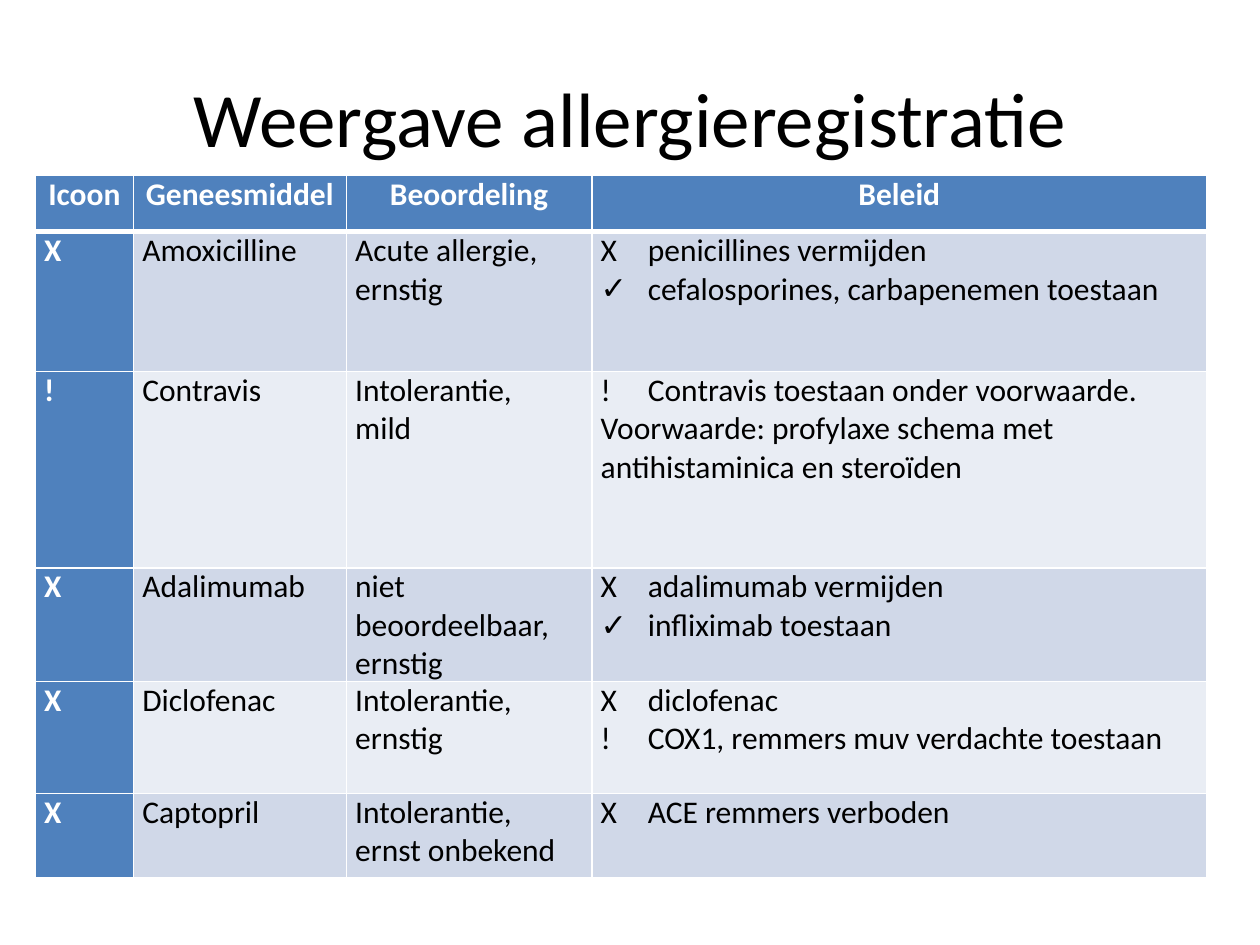
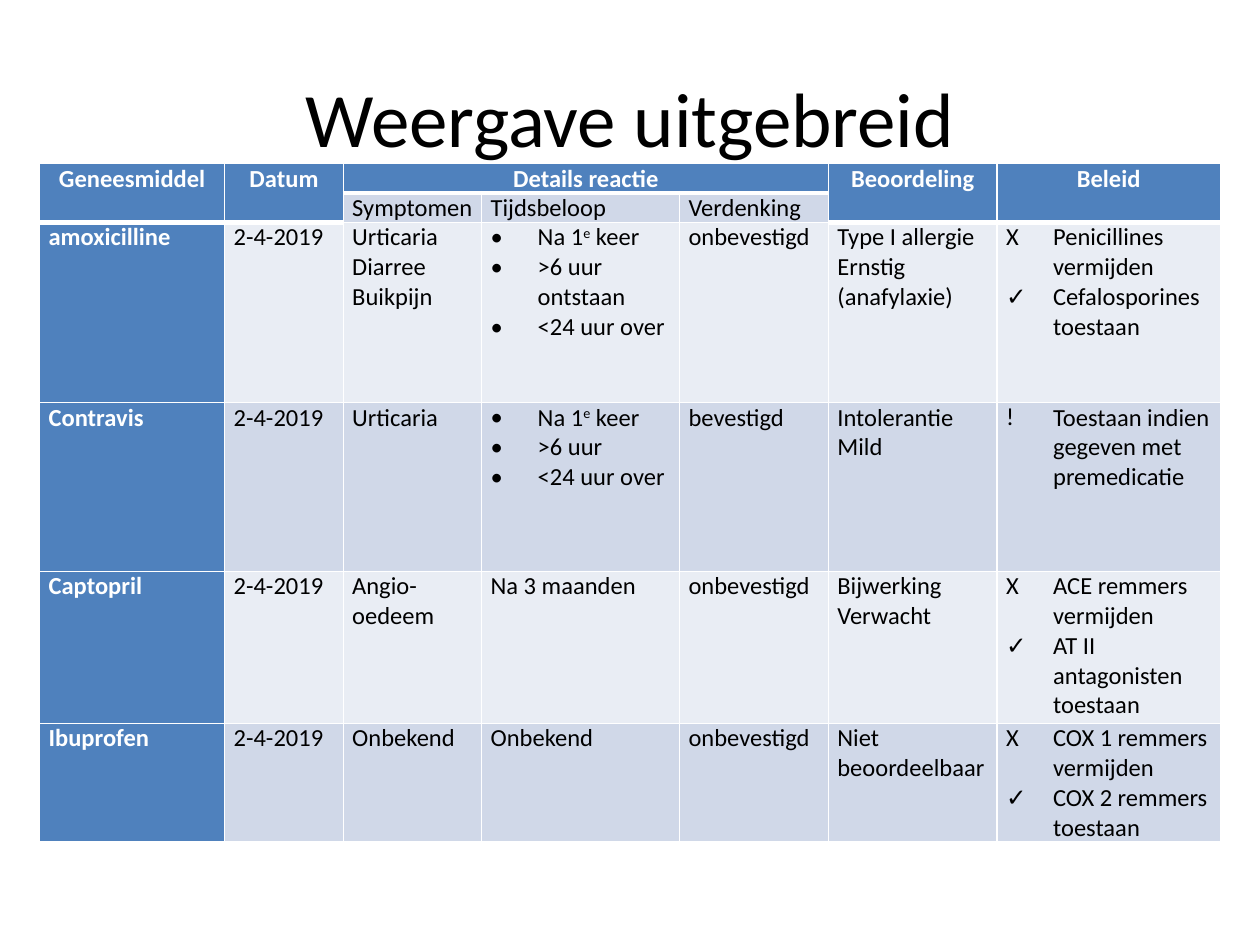
from dataclasses import dataclass

from lxml.etree import SubElement
from pptx import Presentation
from pptx.dml.color import RGBColor
from pptx.enum.text import MSO_ANCHOR, PP_ALIGN
from pptx.oxml.ns import qn
from pptx.util import Cm, Pt


@dataclass(frozen=True)
class Theme:
    font: str = "Calibri"
    accent: str = "4F81BD"
    band_dark: str = "D0D8E8"
    band_light: str = "E9EDF4"
    paper: str = "FFFFFF"
    ink: str = "000000"
    title_size: int = 44
    grid_line: int = 1
    header_line: int = 3


@dataclass(frozen=True)
class Line:
    text: str
    marker: str = ""


@dataclass(frozen=True)
class Span:
    top: int
    left: int
    bottom: int
    right: int


@dataclass(frozen=True)
class Overview:
    title: str
    left: float
    top: float
    size: int
    columns: tuple
    heights: tuple
    rows: tuple
    spans: tuple = ()


THEME = Theme()


def avoid(text: str) -> Line:
    return Line(text, "X")


def allow(text: str) -> Line:
    return Line(text, "✓")


def caution(text: str) -> Line:
    return Line(text, "!")


def course(*steps: str) -> tuple:
    return tuple(Line(step, "•") for step in steps)


REGISTRATION = Overview(
    title="Weergave allergieregistratie",
    left=0.71, top=3.53, size=18,
    columns=(1.98, 4.29, 4.95, 12.4),
    heights=(1.14, 2.82, 3.96, 2.26, 2.26, 1.7),
    rows=(
        ("Icoon", "Geneesmiddel", "Beoordeling", "Beleid"),
        ("X", "Amoxicilline", "Acute allergie, ernstig",
         (avoid("penicillines vermijden"),
          allow("cefalosporines, carbapenemen toestaan"))),
        ("!", "Contravis", ("Intolerantie,", "mild"),
         (caution("Contravis toestaan onder voorwaarde."),
          "Voorwaarde: profylaxe schema met antihistaminica en steroïden")),
        ("X", "Adalimumab", "niet beoordeelbaar, ernstig",
         (avoid("adalimumab vermijden"), allow("infliximab toestaan"))),
        ("X", "Diclofenac", ("Intolerantie,", "ernstig"),
         (avoid("diclofenac"),
          caution("COX1, remmers muv verdachte toestaan"))),
        ("X", "Captopril", ("Intolerantie,", "ernst onbekend"),
         (avoid("ACE remmers verboden"),)),
    ),
)

DATE = "2-4-2019"
FIRST_TIME = "Na 1^e^ keer"

EXTENDED = Overview(
    title="Weergave uitgebreid",
    left=0.8, top=3.3, size=14,
    columns=(3.73, 2.39, 2.79, 3.99, 3, 3.4, 4.5),
    heights=(0.51, 0.51, 3.63, 3.4, 3.07, 2.01),
    rows=(
        ("Geneesmiddel", "Datum", "Details reactie", "", "",
         "Beoordeling", "Beleid"),
        ("", "", "Symptomen", "Tijdsbeloop", "Verdenking", "", ""),
        ("amoxicilline", DATE, ("Urticaria", "Diarree", "Buikpijn"),
         course(FIRST_TIME, ">6 uur ontstaan", "<24 uur over"),
         "onbevestigd", ("Type I allergie", "Ernstig (anafylaxie)"),
         (avoid("Penicillines vermijden"),
          allow("Cefalosporines toestaan"))),
        ("Contravis", DATE, "Urticaria",
         course(FIRST_TIME, ">6 uur", "<24 uur over"),
         "bevestigd", ("Intolerantie", "Mild"),
         (caution("Toestaan indien gegeven met premedicatie"),)),
        ("Captopril", DATE, "Angio-oedeem", "Na 3 maanden",
         "onbevestigd", ("Bijwerking", "Verwacht"),
         (avoid("ACE remmers vermijden"),
          allow("AT II antagonisten toestaan"))),
        ("Ibuprofen", DATE, "Onbekend", "Onbekend",
         "onbevestigd", "Niet beoordeelbaar",
         (avoid("COX 1 remmers vermijden"),
          allow("COX 2 remmers toestaan"))),
    ),
    spans=(
        Span(0, 2, 0, 4),
        *(Span(0, column, 1, column) for column in (0, 1, 5, 6)),
    ),
)


def style_font(font, size: int, color: str, bold: bool = False) -> None:
    font.name = THEME.font
    font.size = Pt(size)
    font.bold = bold
    font.color.rgb = RGBColor.from_string(color)


def add_title(slide, title: str) -> None:
    heading = slide.shapes.add_textbox(Cm(1.27), Cm(0.76), Cm(22.86), Cm(3.18))
    frame = heading.text_frame
    frame.word_wrap = True
    frame.vertical_anchor = MSO_ANCHOR.MIDDLE
    frame.text = title
    paragraph = frame.paragraphs[0]
    paragraph.alignment = PP_ALIGN.CENTER
    style_font(paragraph.runs[0].font, THEME.title_size, THEME.ink)


def add_bullet(paragraph, marker: str) -> None:
    properties = paragraph._p.get_or_add_pPr()
    properties.set("marL", str(Cm(0.95)))
    properties.set("indent", str(-Cm(0.95)))
    SubElement(properties, qn("a:buFont")).set("typeface", THEME.font)
    SubElement(properties, qn("a:buChar")).set("char", marker)


def draw_borders(cell, top: int, bottom: int) -> None:
    properties = cell._tc.get_or_add_tcPr()
    widths = {"L": THEME.grid_line, "R": THEME.grid_line, "T": top, "B": bottom}
    for side, width in widths.items():
        border = SubElement(properties, qn(f"a:ln{side}"), w=str(Pt(width)))
        fill = SubElement(border, qn("a:solidFill"))
        SubElement(fill, qn("a:srgbClr")).set("val", THEME.paper)


def write_cell(cell, content, size: int, color: str, bold: bool,
               centred: bool) -> None:
    lines = (content,) if isinstance(content, str) else content
    frame = cell.text_frame
    for index, entry in enumerate(lines):
        line = Line(entry) if isinstance(entry, str) else entry
        paragraph = frame.add_paragraph() if index else frame.paragraphs[0]
        paragraph.alignment = PP_ALIGN.CENTER if centred else PP_ALIGN.LEFT
        if line.marker:
            add_bullet(paragraph, line.marker)
        for position, part in enumerate(line.text.split("^")):
            run = paragraph.add_run()
            run.text = part
            style_font(run.font, size, color, bold)
            if position % 2:
                run._r.get_or_add_rPr().set("baseline", "30000")


def add_overview(slide, overview: Overview) -> None:
    table = slide.shapes.add_table(
        len(overview.rows), len(overview.columns),
        Cm(overview.left), Cm(overview.top),
        Cm(sum(overview.columns)), Cm(sum(overview.heights)),
    ).table
    table.first_row = table.horz_banding = False
    for column, width in zip(table.columns, overview.columns):
        column.width = Cm(width)
    for row, height in zip(table.rows, overview.heights):
        row.height = Cm(height)
    for span in overview.spans:
        table.cell(span.top, span.left).merge(table.cell(span.bottom, span.right))

    def is_header(row: int, column: int) -> bool:
        return row == 0 or (row > 0 and table.cell(row, column).is_spanned)

    def edge(row: int, column: int) -> int:
        heavy = row >= 0 and is_header(row, column)
        return THEME.header_line if heavy else THEME.grid_line

    for r, contents in enumerate(overview.rows):
        for c, content in enumerate(contents):
            cell = table.cell(r, c)
            header = is_header(r, c)
            accented = header or c == 0
            band = THEME.band_dark if r % 2 else THEME.band_light
            cell.margin_left = cell.margin_right = Cm(0.18)
            cell.margin_top = cell.margin_bottom = 0
            draw_borders(cell, edge(r - 1, c), edge(r, c))
            cell.fill.solid()
            cell.fill.fore_color.rgb = RGBColor.from_string(
                THEME.accent if accented else band)
            if not cell.is_spanned:
                color = THEME.paper if accented else THEME.ink
                write_cell(cell, content, overview.size, color, accented, header)


def main() -> None:
    presentation = Presentation()
    presentation.slide_width = Cm(25.4)
    presentation.slide_height = Cm(19.05)
    for overview in (REGISTRATION, EXTENDED):
        slide = presentation.slides.add_slide(presentation.slide_layouts[6])
        add_title(slide, overview.title)
        add_overview(slide, overview)
    presentation.save("out.pptx")


if __name__ == "__main__":
    main()
